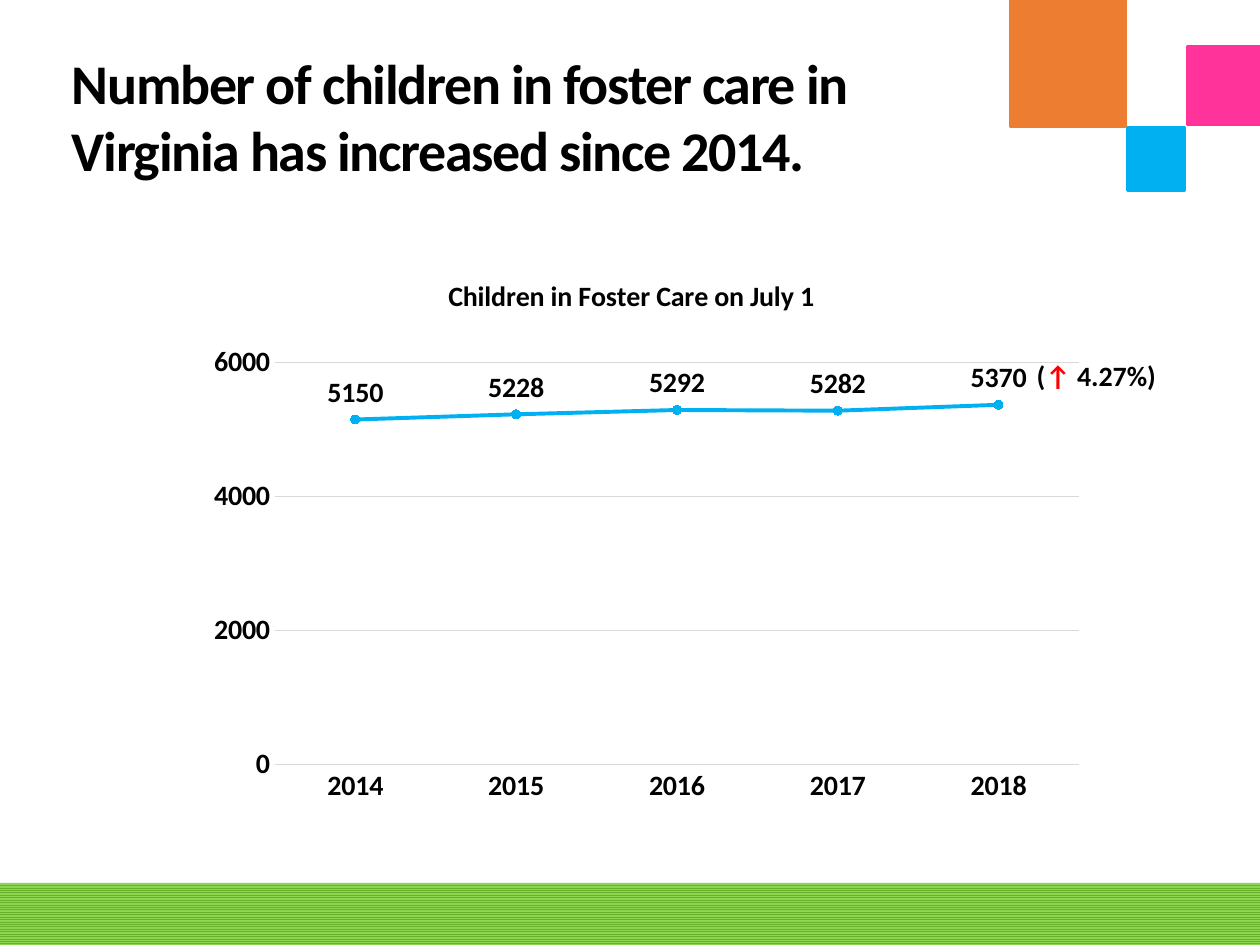
import pptx
import pptx.chart.data
from lxml import etree
from pptx.dml.color import RGBColor
from pptx.enum.chart import XL_CHART_TYPE, XL_LABEL_POSITION, XL_MARKER_STYLE, XL_TICK_MARK
from pptx.enum.dml import MSO_PATTERN
from pptx.enum.shapes import MSO_SHAPE
from pptx.enum.text import MSO_ANCHOR, MSO_AUTO_SIZE, PP_ALIGN
from pptx.oxml.ns import qn
from pptx.util import Cm, Pt

COLORS = {
    "text": "000000", "rise": "FF0000", "grid": "D9D9D9",
    "orange": "ED7D31", "blue": "00B0F0", "pink": "FF3399",
    "stripe": "67B22A", "green": "8CD64F",
}
FONT = "Calibri"
CHILDREN_BY_YEAR = {"2014": 5150, "2015": 5228, "2016": 5292, "2017": 5282, "2018": 5370}


def rgb(name):
    return RGBColor.from_string(COLORS[name])


def set_font(font, size, color="text"):
    font.name, font.size, font.bold = FONT, Pt(size), True
    font.color.rgb = rgb(color)


def add_rect(s, x, y, w, h):
    sp = s.shapes.add_shape(MSO_SHAPE.RECTANGLE, Cm(x), Cm(y), Cm(w), Cm(h))
    sp.shadow.inherit = False
    return sp


def add_footer_band(s, x, y, w, h):
    sp = add_rect(s, x, y, w, h)
    sp.fill.patterned()
    sp.fill.pattern = MSO_PATTERN.NARROW_HORIZONTAL
    sp.fill.fore_color.rgb = rgb("stripe")
    sp.fill.back_color.rgb = rgb("green")
    sp.line.fill.background()


def add_corner_blocks(s, x, y):
    blocks = [
        ("orange", 0, 0, 2.31, 2.54),
        ("blue", 2.36, 2.57, 1.14, 1.27),
        ("pink", 3.58, 0.94, 1.45, 1.57),
    ]
    for color, dx, dy, w, h in blocks:
        sp = add_rect(s, x + dx, y + dy, w, h)
        sp.fill.solid()
        sp.fill.fore_color.rgb = rgb(color)
        sp.line.color.rgb = rgb(color)
        sp.line.width = Pt(2)


def set_title(s, text, x, y, w, h):
    sp = s.shapes.title
    sp.left, sp.top, sp.width, sp.height = Cm(x), Cm(y), Cm(w), Cm(h)
    tf = sp.text_frame
    tf.text = text
    tf.word_wrap = True
    tf.auto_size = MSO_AUTO_SIZE.NONE
    tf.vertical_anchor = MSO_ANCHOR.MIDDLE
    tf.margin_left = tf.margin_right = Cm(0.18)
    tf.margin_top = tf.margin_bottom = Cm(0.1)
    p = tf.paragraphs[0]
    p.alignment = PP_ALIGN.LEFT
    set_font(p.font, 32)
    p.runs[0].font._element.set("spc", "-80")


def set_layout(parent, index, **values):
    """Place a chart part by fractions of the chart's size."""
    layout = parent.find(qn("c:layout"))
    if layout is None:
        layout = etree.Element(qn("c:layout"))
        parent.insert(index, layout)
    manual = etree.SubElement(layout, qn("c:manualLayout"))
    for tag, value in values.items():
        etree.SubElement(manual, qn(f"c:{tag}")).set("val", str(value))


def style_axis(axis):
    axis.major_tick_mark = axis.minor_tick_mark = XL_TICK_MARK.NONE
    set_font(axis.tick_labels.font, 16)


def style_line(line, color, width):
    line.color.rgb = rgb(color)
    line.width = Pt(width)


def add_foster_care_chart(s, x, y, w, h):
    data = pptx.chart.data.CategoryChartData()
    data.categories = list(CHILDREN_BY_YEAR)
    data.add_series("Series 1", list(CHILDREN_BY_YEAR.values()))
    chart = s.shapes.add_chart(
        XL_CHART_TYPE.LINE_MARKERS, Cm(x), Cm(y), Cm(w), Cm(h), data).chart
    chart.font.name, chart.font.size = FONT, Pt(10)
    chart.has_legend = False

    chart.has_title = True
    title = chart.chart_title
    title.text_frame.text = "Children in Foster Care on July 1"
    set_font(title.text_frame.paragraphs[0].font, 16)
    set_layout(title._element, 1, xMode="edge", yMode="edge", x=0.3, y=0.05)

    plot = chart.plots[0]
    plot.vary_by_categories = False
    set_layout(plot._element.getparent(), 0, layoutTarget="inner", xMode="edge",
               yMode="edge", x=0.12, y=0.205, w=0.86, h=0.683)

    style_axis(chart.category_axis)
    style_line(chart.category_axis.format.line, "grid", 0.75)
    axis = chart.value_axis
    style_axis(axis)
    axis.minimum_scale, axis.maximum_scale, axis.major_unit = 0, 6000, 2000
    axis.format.line.fill.background()
    style_line(axis.major_gridlines.format.line, "grid", 0.75)

    series = plot.series[0]
    series.smooth = False
    style_line(series.format.line, "blue", 2.25)
    marker = series.marker
    marker.style, marker.size = XL_MARKER_STYLE.CIRCLE, 5
    marker.format.fill.solid()
    marker.format.fill.fore_color.rgb = rgb("blue")
    marker.format.line.color.rgb = rgb("blue")
    labels = series.data_labels
    labels.show_value = True
    labels.position = XL_LABEL_POSITION.ABOVE
    set_font(labels.font, 16)


def add_change_note(s, x, y, w, h):
    tf = s.shapes.add_textbox(Cm(x), Cm(y), Cm(w), Cm(h)).text_frame
    tf.word_wrap = True
    tf.auto_size = MSO_AUTO_SIZE.SHAPE_TO_FIT_TEXT
    for text, color in [("(", "text"), ("↑ ", "rise"), ("4.27%)", "text")]:
        r = tf.paragraphs[0].add_run()
        r.text = text
        set_font(r.font, 16, color)


def main():
    prs = pptx.Presentation()
    prs.slide_width, prs.slide_height = Cm(25.4), Cm(19.05)
    s = prs.slides.add_slide(prs.slide_layouts[5])
    add_footer_band(s, 0, 17.8, 25.4, 1.25)
    add_corner_blocks(s, 20.37, 0)
    set_title(s, "Number of children in foster care in Virginia has increased since 2014.",
              1.27, 0.64, 18.85, 3.38)
    add_foster_care_chart(s, 3.28, 4.88, 18.85, 11.86)
    add_change_note(s, 20.65, 7.11, 3.61, 0.94)
    prs.save("out.pptx")


if __name__ == "__main__":
    main()
